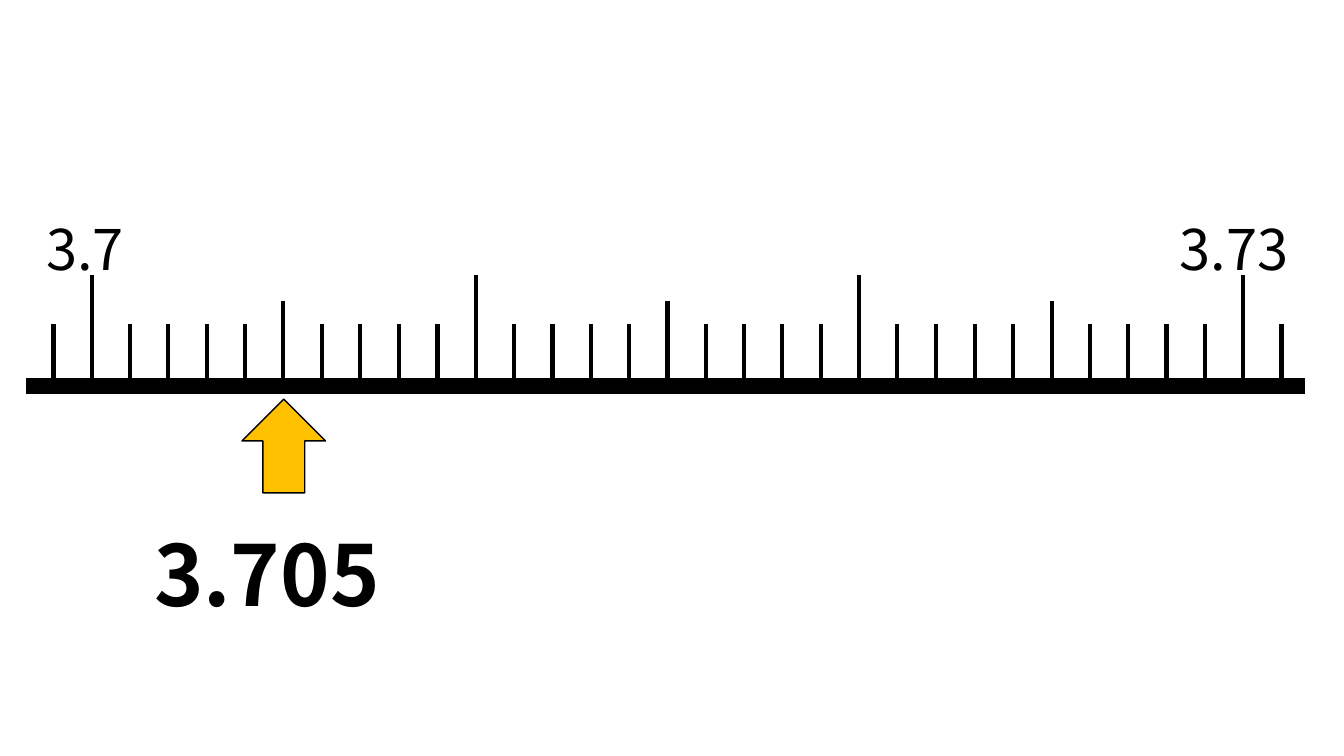
from pptx import Presentation
from pptx.dml.color import RGBColor
from pptx.enum.shapes import MSO_CONNECTOR, MSO_SHAPE
from pptx.enum.text import MSO_AUTO_SIZE
from pptx.oxml.ns import qn
from pptx.util import Emu, Pt
from lxml.etree import SubElement

PX = 9144  # 100 px to the inch
BLACK = "000000"
FONT = "Noto Sans CJK JP"

AXIS_Y = 383
FIRST_MAJOR_X, LAST_MAJOR_X = 91, 1233
STEPS = 30  # thousandths from 3.7 to 3.73


def color(hex_string):
    return RGBColor.from_string(hex_string)


def add_line(x1, y1, x2, y2, weight):
    ends = [Emu(round(value) * PX) for value in (x1, y1, x2, y2)]
    line = slide.shapes.add_connector(MSO_CONNECTOR.STRAIGHT, *ends)
    line.line.color.rgb = color(BLACK)
    line.line.width = Pt(weight)
    SubElement(line._element.spPr, qn("a:effectLst"))


deck = Presentation()
deck.slide_width, deck.slide_height = Emu(1333 * PX), Emu(750 * PX)
slide = deck.slides.add_slide(deck.slide_layouts[6])

# Number line with one tick per thousandth, one extra at each end
add_line(26, AXIS_Y, 1294, AXIS_Y, 12)
for step in range(-1, STEPS + 2):
    x = FIRST_MAJOR_X + step * (LAST_MAJOR_X - FIRST_MAJOR_X) / STEPS
    if step % 10 == 0:
        height = 110
    elif step % 5 == 0:
        height = 84
    else:
        height = 62
    add_line(x, AXIS_Y, x, AXIS_Y - height, 3)

# Arrow at 3.705
arrow = slide.shapes.add_shape(
    MSO_SHAPE.UP_ARROW, Emu(240 * PX), Emu(396 * PX), Emu(83 * PX), Emu(93 * PX))
arrow.shadow.inherit = False
arrow.fill.solid()
arrow.fill.fore_color.rgb = color("FFC000")
arrow.line.color.rgb = color(BLACK)
arrow.line.width = Pt(1)

# Labels: text, left, top, width, height, size, bold
labels = [
    ("3.7", 36, 208, 110, 77, 40, False),
    ("3.73", 1160, 208, 144, 77, 40, False),
    ("3.705", 143, 513, 277, 111, 60, True),
]
for text, left, top, width, height, size, bold in labels:
    box = slide.shapes.add_textbox(
        Emu(left * PX), Emu(top * PX), Emu(width * PX), Emu(height * PX))
    box.text_frame.word_wrap = False
    box.text_frame.auto_size = MSO_AUTO_SIZE.SHAPE_TO_FIT_TEXT
    span = box.text_frame.paragraphs[0].add_run()
    span.text = text
    span.font.name = FONT
    span.font.size = Pt(size)
    span.font.bold = bold
    span.font.color.rgb = color(BLACK)

deck.save("out.pptx")
